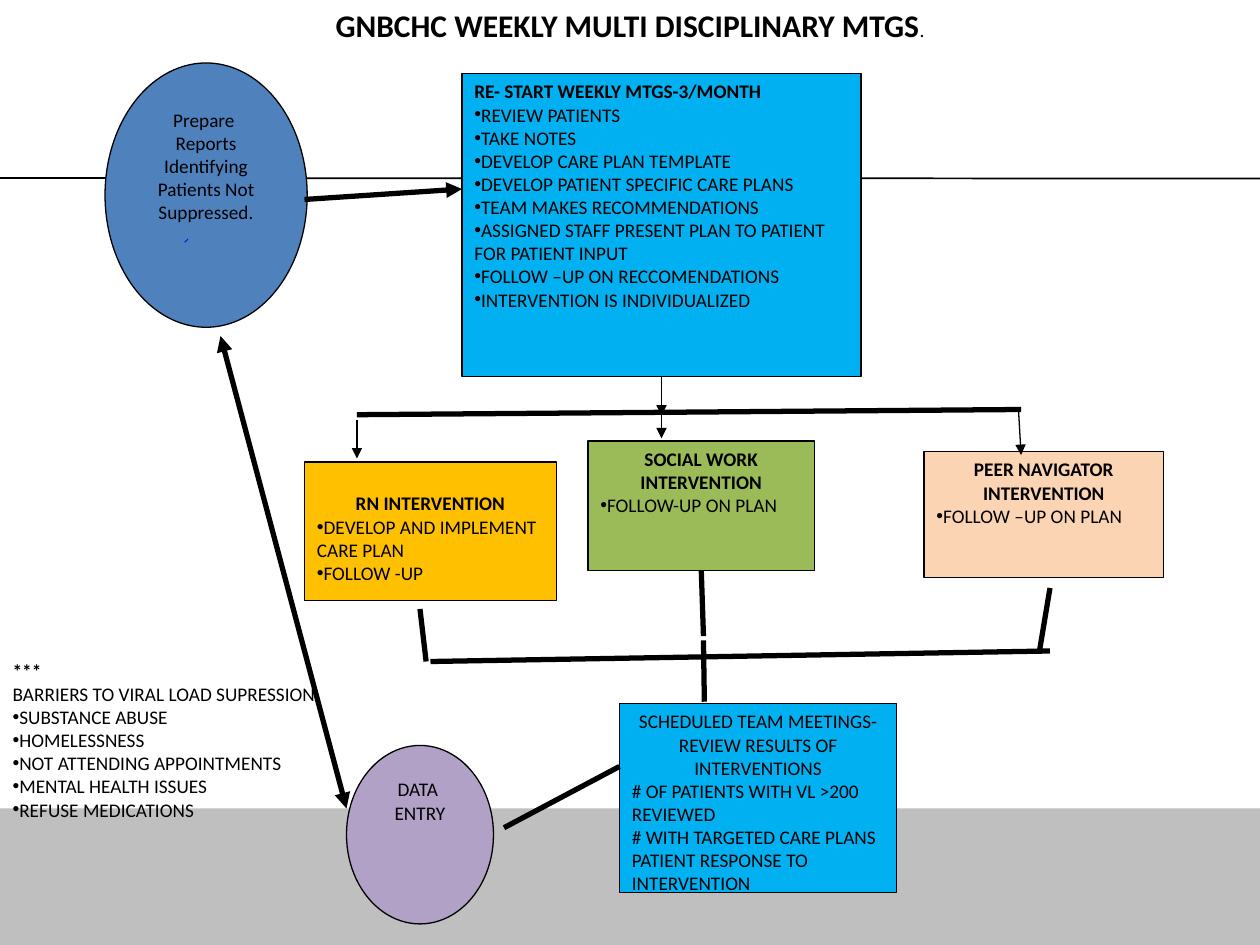
"""Build the flow chart of weekly multidisciplinary meetings."""
from lxml import etree
from pptx import Presentation
from pptx import util as u
from pptx.dml.color import RGBColor
from pptx.enum import shapes, text
from pptx.oxml.ns import qn

Pt = u.Pt
BLACK = RGBColor(0x00, 0x00, 0x00)
GREY = RGBColor(0xBF, 0xBF, 0xBF)
SKY = RGBColor(0x00, 0xB0, 0xF0)
BLUE = RGBColor(0x4F, 0x81, 0xBD)
AMBER = RGBColor(0xFF, 0xC0, 0x00)
GREEN = RGBColor(0x9B, 0xBB, 0x59)
PEACH = RGBColor(0xFB, 0xD4, 0xB4)
LILAC = RGBColor(0xB2, 0xA1, 0xC7)
INK_BLUE = RGBColor(0x00, 0x00, 0xFF)
RECT, OVAL = shapes.MSO_SHAPE.RECTANGLE, shapes.MSO_SHAPE.OVAL
LEFT, CENTER = text.PP_ALIGN.LEFT, text.PP_ALIGN.CENTER
HEADING, PLAIN, CENTERED, BULLET = "heading", "plain", "centered", "bullet"
BOLD_LEFT = "bold left"


def write(frame, lines):
    """Fill a text frame with (style, wording) lines."""
    frame.word_wrap = True
    frame.auto_size = text.MSO_AUTO_SIZE.NONE
    frame.vertical_anchor = text.MSO_ANCHOR.TOP
    for number, (style, wording) in enumerate(lines):
        line = frame.add_paragraph() if number else frame.paragraphs[0]
        line.alignment = CENTER if style in (HEADING, CENTERED) else LEFT
        line.space_before = Pt(0)
        props = line._p.get_or_add_pPr()
        props.set("marL", "0")
        props.set("indent", "0")
        if style == BULLET:
            etree.SubElement(props, qn("a:buFont")).set("typeface", "Arial")
            etree.SubElement(props, qn("a:buChar")).set("char", "•")
        else:
            etree.SubElement(props, qn("a:buNone"))
        run = line.add_run()
        run.text = wording
        run.font.name, run.font.size = "Calibri", Pt(11)
        run.font.bold = style in (HEADING, BOLD_LEFT)
        run.font.color.rgb = BLACK


def connect(start, end, weight, arrows=(), color=BLACK):
    """Draw a line between two points, with arrowheads at the named ends."""
    link = slide.shapes.add_connector(
        shapes.MSO_CONNECTOR.STRAIGHT, *(Pt(v) for v in start + end))
    link.line.color.rgb = color
    link.line.width = Pt(weight)
    for arrow in arrows:
        etree.SubElement(link.line._get_or_add_ln(), qn(arrow)).set("type", "triangle")
    etree.SubElement(link._element.spPr, qn("a:effectLst"))
    return link


deck = Presentation()
deck.slide_width, deck.slide_height = Pt(720), Pt(540)
slide = deck.slides.add_slide(deck.slide_layouts[1])

title, barriers = slide.placeholders
title.left, title.top, title.width, title.height = Pt(0), Pt(0), Pt(720), Pt(29)
title.text_frame.auto_size = text.MSO_AUTO_SIZE.NONE
title.text_frame.vertical_anchor = text.MSO_ANCHOR.MIDDLE
heading = title.text_frame.paragraphs[0]
heading.alignment = CENTER
for wording, size, bold in [("GNBCHC WEEKLY MULTI DISCIPLINARY MTGS", 18, True),
                            (".", 11, False)]:
    run = heading.add_run()
    run.text = wording
    run.font.name, run.font.size, run.font.bold = "Calibri", Pt(size), bold
    run.font.color.rgb = BLACK

barriers.left, barriers.top = Pt(0), Pt(373)
barriers.width, barriers.height = Pt(189.5), Pt(102)
write(barriers.text_frame, [
    (BOLD_LEFT, "***"),
    (PLAIN, "BARRIERS TO VIRAL LOAD SUPRESSION"),
    (BULLET, "SUBSTANCE ABUSE"),
    (BULLET, "HOMELESSNESS"),
    (BULLET, "NOT ATTENDING APPOINTMENTS"),
    (BULLET, "MENTAL HEALTH ISSUES"),
    (BULLET, "REFUSE MEDICATIONS"),
])

footer_band = slide.shapes.add_shape(RECT, Pt(0), Pt(462), Pt(720), Pt(78))
footer_band.shadow.inherit = False
footer_band.fill.solid()
footer_band.fill.fore_color.rgb = GREY
footer_band.line.fill.background()
header_rule = connect((0, 101.75), (720, 102), 1)
for backdrop in (header_rule, footer_band):
    slide.shapes._spTree.insert(2, backdrop._element)

steps = {
    "meetings": (RECT, SKY, 264, 42, 228, 173, [
        (BOLD_LEFT, "RE- START WEEKLY MTGS-3/MONTH"),
        (BULLET, "REVIEW PATIENTS"),
        (BULLET, "TAKE NOTES"),
        (BULLET, "DEVELOP CARE PLAN TEMPLATE"),
        (BULLET, "DEVELOP PATIENT SPECIFIC CARE PLANS"),
        (BULLET, "TEAM MAKES RECOMMENDATIONS"),
        (BULLET, "ASSIGNED STAFF PRESENT PLAN TO PATIENT FOR PATIENT INPUT"),
        (BULLET, "FOLLOW –UP ON RECCOMENDATIONS"),
        (BULLET, "INTERVENTION IS INDIVIDUALIZED")]),
    "reports": (OVAL, BLUE, 60, 36, 115.5, 151, [
        (CENTERED, "Prepare "),
        (CENTERED, "Reports Identifying Patients Not Suppressed.")]),
    "nurse": (RECT, AMBER, 174, 264, 144, 79, [
        (HEADING, "RN INTERVENTION"),
        (BULLET, "DEVELOP AND IMPLEMENT CARE PLAN"),
        (BULLET, "FOLLOW -UP")]),
    "social work": (RECT, GREEN, 336, 252, 129.5, 74, [
        (HEADING, "SOCIAL WORK INTERVENTION"),
        (BULLET, "FOLLOW-UP ON PLAN")]),
    "navigator": (RECT, PEACH, 528, 258, 137, 72, [
        (HEADING, "PEER NAVIGATOR"),
        (HEADING, "INTERVENTION"),
        (BULLET, "FOLLOW –UP ON PLAN")]),
    "results": (RECT, SKY, 354, 402, 158.5, 108, [
        (CENTERED, "SCHEDULED TEAM MEETINGS-REVIEW RESULTS OF INTERVENTIONS"),
        (PLAIN, "# OF PATIENTS WITH VL >200 REVIEWED"),
        (PLAIN, "# WITH TARGETED CARE PLANS"),
        (PLAIN, "PATIENT RESPONSE TO INTERVENTION")]),
    "data entry": (OVAL, LILAC, 198, 426, 84, 102, [
        (CENTERED, "DATA "),
        (CENTERED, "ENTRY")]),
}
placed = {}
for step, (outline, color, left, top, width, height, lines) in steps.items():
    node = slide.shapes.add_shape(outline, Pt(left), Pt(top), Pt(width), Pt(height))
    node.shadow.inherit = False
    node.fill.solid()
    node.fill.fore_color.rgb = color
    node.line.color.rgb = BLACK
    node.line.width = Pt(0.75)
    write(node.text_frame, lines)
    placed[step] = node
placed["nurse"].text_frame.margin_top = Pt(17)

TAIL, BOTH = ("a:tailEnd",), ("a:headEnd", "a:tailEnd")
connect((174, 114), (264, 108), 3, TAIL)
connect((126, 192), (198, 462), 3, BOTH)
connect((204, 237), (583.5, 234), 3)
for start, end in [((378, 234), (378, 250.5)),
                   ((204, 240), (204, 262)),
                   ((582, 234), (583.5, 260))]:
    connect(start, end, 0.75, TAIL)
meetings_out = connect((378, 215), (378, 237.5), 0.75, TAIL)
meetings_out.begin_connect(placed["meetings"], 2)
for start, end in [((240, 348), (243.5, 378)),
                   ((402, 366), (402.5, 401)),
                   ((246, 378), (600, 372)),
                   ((600, 336), (594, 372)),
                   ((354, 438), (288, 473))]:
    connect(start, end, 3)
social_out = connect((401, 326), (402, 363.5), 3)
social_out.begin_connect(placed["social work"], 2)
connect((105.5, 138.5), (107.5, 136.5), 0.5, color=INK_BLUE)

deck.save("out.pptx")
